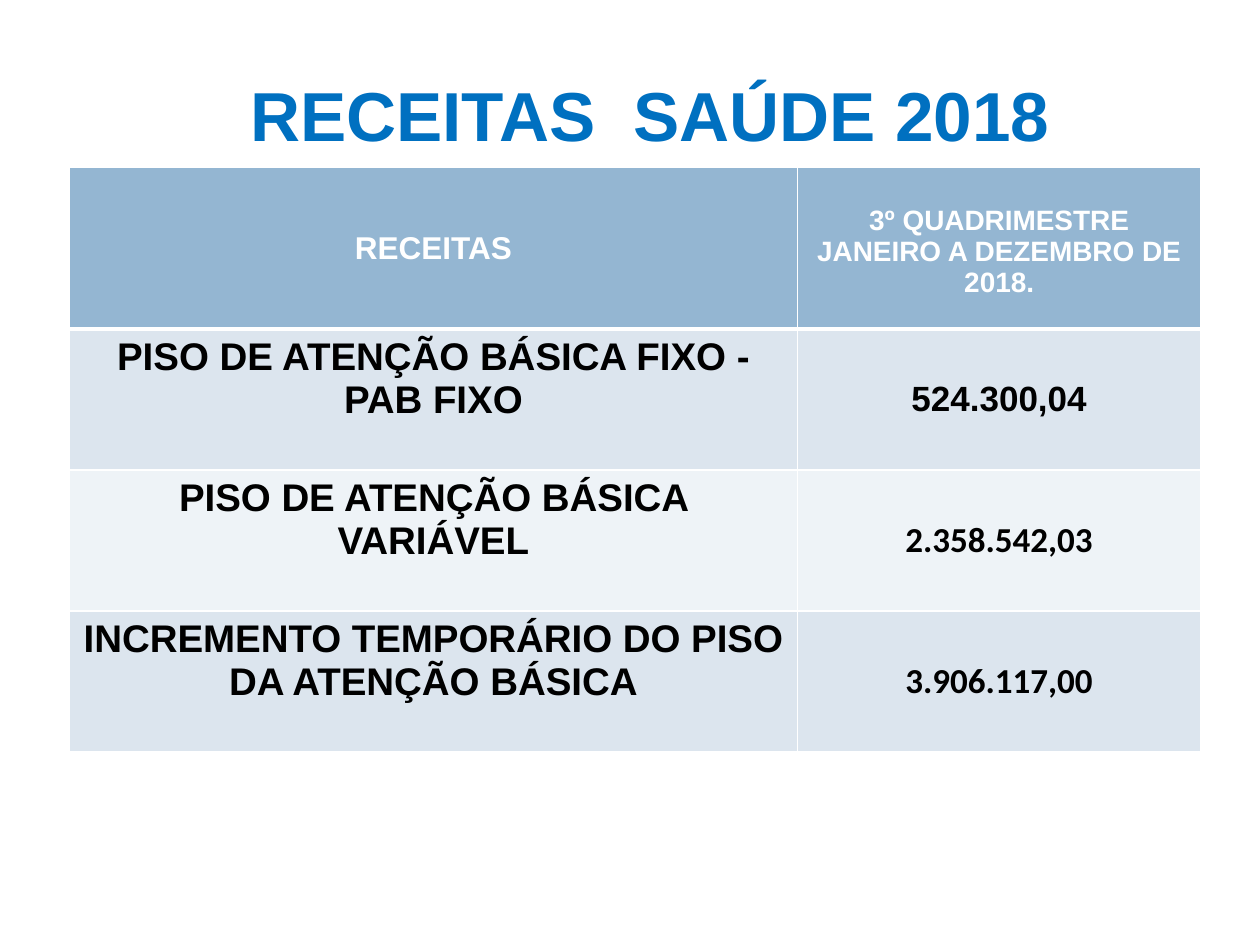
import pptx
import pptx.dml.color
import pptx.enum.text
import pptx.oxml
import pptx.oxml.ns
import pptx.util
from pptx.util import Inches

ANCHOR = pptx.enum.text.MSO_ANCHOR
CENTER = pptx.enum.text.PP_ALIGN.CENTER

HEADERS = ["RECEITAS", "3º QUADRIMESTRE\nJANEIRO A DEZEMBRO DE 2018."]
REVENUES = [
    ("PISO DE ATENÇÃO BÁSICA FIXO - PAB FIXO", "524.300,04", "Arial"),
    ("PISO DE ATENÇÃO BÁSICA VARIÁVEL", "2.358.542,03", "Calibri"),
    ("INCREMENTO TEMPORÁRIO DO PISO DA ATENÇÃO BÁSICA", "3.906.117,00", "Calibri"),
]
COLUMN_WIDTHS = [5.78, 3.2]
HEADER_HEIGHT = 1.28
ROW_HEIGHT = 1.12


def rgb(value):
    return pptx.dml.color.RGBColor.from_string(value)


def write(tf, text, size, color, name="Arial"):
    tf.text = text
    font_values = {"size": pptx.util.Pt(size), "name": name, "bold": True}
    for p in tf.paragraphs:
        p.alignment = CENTER
        for r in p.runs:
            for key, value in font_values.items():
                setattr(r.font, key, value)
            r.font.color.rgb = rgb(color)


def set_borders(cell, widths):
    tc_pr = cell._tc.get_or_add_tcPr()
    for i, (side, width) in enumerate(widths.items()):
        line = pptx.oxml.parse_xml(
            f'<a:{side} {pptx.oxml.ns.nsdecls("a")} w="{pptx.util.Pt(width)}">'
            f'<a:solidFill><a:srgbClr val="FFFFFF"/></a:solidFill></a:{side}>'
        )
        tc_pr.insert(i, line)


def fill_cell(cell, text, size, color, fill, name="Arial",
              anchor=ANCHOR.MIDDLE, top=1, bottom=1):
    write(cell.text_frame, text, size, color, name)
    cell.vertical_anchor = anchor
    cell.fill.solid()
    cell.fill.fore_color.rgb = rgb(fill)
    set_borders(cell, {"lnL": 1, "lnR": 1, "lnT": top, "lnB": bottom})


def add_title(s, text):
    sp = s.shapes.title
    box = {"left": 0.62, "top": 0.55, "width": 9.08, "height": 0.71}
    for key, value in box.items():
        setattr(sp, key, Inches(value))
    tf = sp.text_frame
    tf.vertical_anchor = ANCHOR.MIDDLE
    write(tf, text, 39.6, "0070C0")


def add_revenue_table(s):
    height = HEADER_HEIGHT + ROW_HEIGHT * len(REVENUES)
    table = s.shapes.add_table(
        len(REVENUES) + 1, len(COLUMN_WIDTHS), Inches(0.55), Inches(1.33),
        Inches(sum(COLUMN_WIDTHS)), Inches(height),
    ).table
    for column, width in zip(table.columns, COLUMN_WIDTHS):
        column.width = Inches(width)
    for i, row in enumerate(table.rows):
        row.height = Inches(ROW_HEIGHT if i else HEADER_HEIGHT)
    for j, (text, size) in enumerate(zip(HEADERS, [18, 16])):
        fill_cell(table.cell(0, j), text, size, "FFFFFF", "94B6D2", bottom=3)
    table.cell(0, 1).margin_top = Inches(0.11)
    for i, (label, amount, name) in enumerate(REVENUES, 1):
        fill = "DCE5EE" if i % 2 else "EEF3F7"
        top = 3 if i == 1 else 1
        fill_cell(table.cell(i, 0), label, 22, "000000", fill,
                  anchor=ANCHOR.TOP, top=top)
        fill_cell(table.cell(i, 1), amount, 20, "000000", fill, name, top=top)


def main():
    prs = pptx.Presentation()
    prs.slide_width = Inches(10)
    prs.slide_height = Inches(7.5)
    s = prs.slides.add_slide(prs.slide_layouts[5])
    add_title(s, "RECEITAS  SAÚDE 2018")
    add_revenue_table(s)
    prs.save("out.pptx")


if __name__ == "__main__":
    main()
